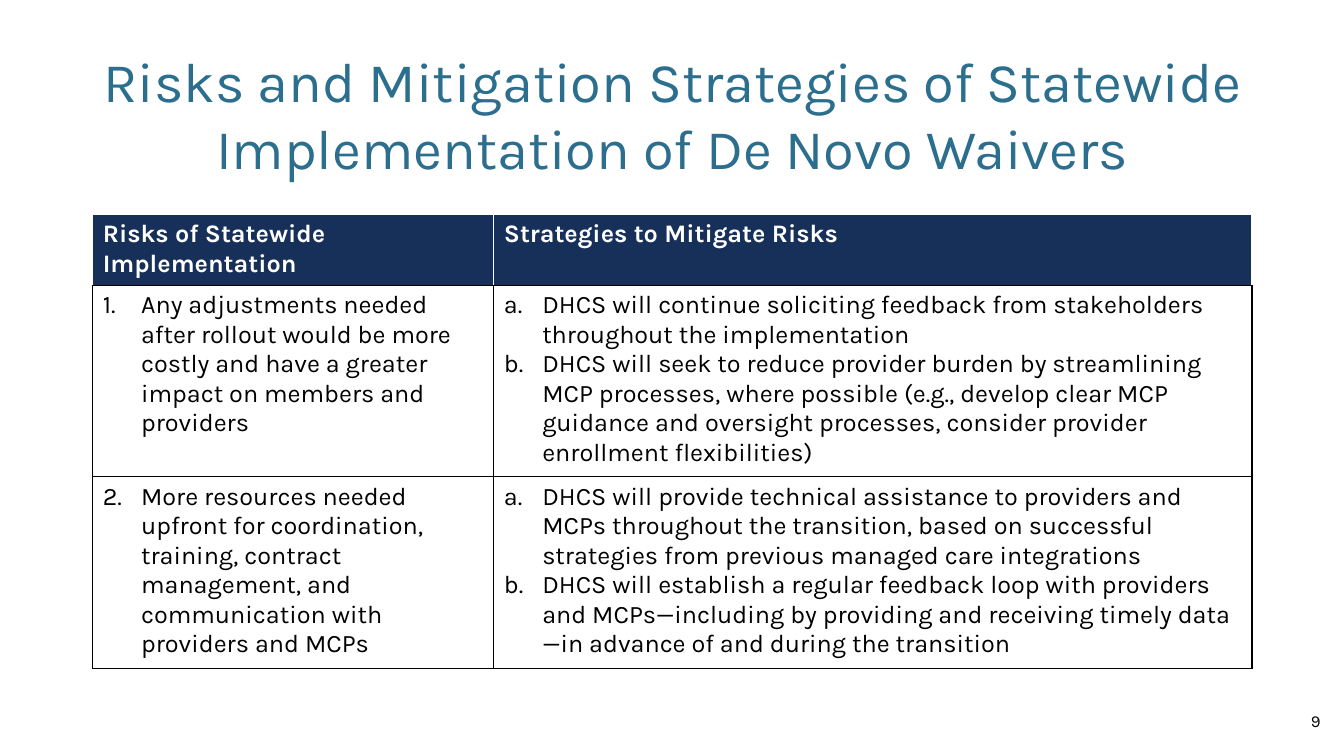
from pptx import Presentation
from pptx.dml.color import RGBColor
from pptx.enum.text import MSO_ANCHOR, PP_ALIGN
from pptx.oxml import parse_xml
from pptx.oxml.ns import nsdecls
from pptx.util import Inches, Pt
from lxml.etree import SubElement

NAVY, TEAL, WHITE, BLACK = "173059", "2C6E8D", "FFFFFF", "000000"

deck = Presentation()
deck.slide_width, deck.slide_height = Inches(13.33), Inches(7.5)
col, row = deck.slide_width / 100, deck.slide_height / 100
slide = deck.slides.add_slide(deck.slide_layouts[6])


def hue(code):
    return RGBColor.from_string(code)


def style(par, text, look):
    par.text = text
    font = par.runs[0].font
    for key, value in look.items():
        setattr(font, key, value)
    return font


labels = [
    ("Risks and Mitigation Strategies of Statewide Implementation of De Novo Waivers",
     (6.9, 5.33, 86.25, 19.33), 40, TEAL, PP_ALIGN.CENTER),
    ("9", (76.5, 92.67, 22.5, 5.33), 12, BLACK, PP_ALIGN.RIGHT),
]
for text, (left, top, wide, high), size, tone, side in labels:
    box = slide.shapes.add_textbox(
        int(left * col), int(top * row), int(wide * col), int(high * row))
    frame = box.text_frame
    frame.word_wrap = True
    frame.vertical_anchor = MSO_ANCHOR.MIDDLE
    par = frame.paragraphs[0]
    par.alignment = side
    style(par, text, {"name": "Karla", "size": Pt(size)}).color.rgb = hue(tone)

rows = [
    [["Risks of Statewide Implementation"], ["Strategies to Mitigate Risks"]],
    [["Any adjustments needed after rollout would be more costly and have a greater impact on members and providers"],
     ["DHCS will continue soliciting feedback from stakeholders throughout the implementation",
      "DHCS will seek to reduce provider burden by streamlining MCP processes, where possible (e.g., develop clear MCP guidance and oversight processes, consider provider enrollment flexibilities)"]],
    [["More resources needed upfront for coordination, training, contract management, and communication with providers and MCPs"],
     ["DHCS will provide technical assistance to providers and MCPs throughout the transition, based on successful strategies from previous managed care integrations",
      "DHCS will establish a regular feedback loop with providers and MCPs—including by providing and receiving timely data—in advance of and during the transition"]],
]
spans, highs = (29.85, 56.4), (9.07, 24.8, 24.8)
table = slide.shapes.add_table(
    3, 2, int(6.9 * col), int(28.4 * row),
    int(sum(spans) * col), int(sum(highs) * row)).table
for part, span in zip(table.columns, spans):
    part.width = int(span * col)
for part, high in zip(table.rows, highs):
    part.height = int(high * row)

for r, cells in enumerate(rows):
    head = r == 0
    look = {"name": "Karla", "size": Pt(18), "bold": head}
    for c, lines in enumerate(cells):
        cell = table.cell(r, c)
        cell.fill.solid()
        cell.fill.fore_color.rgb = hue(NAVY if head else WHITE)
        props = cell._tc.get_or_add_tcPr()
        for spot, edge in enumerate(("lnL", "lnR", "lnT", "lnB")):
            tone = WHITE if head and edge != "lnB" else BLACK
            props.insert(spot, parse_xml(
                f'<a:{edge} {nsdecls("a")} w="12700"><a:solidFill>'
                f'<a:srgbClr val="{tone}"/></a:solidFill></a:{edge}>'))
        frame = cell.text_frame
        for i, text in enumerate(lines):
            par = frame.add_paragraph() if i else frame.paragraphs[0]
            if not head:
                form = par._p.get_or_add_pPr()
                form.set("marL", str(Inches(0.38)))
                form.set("indent", str(-Inches(0.38)))
                space = form.nsmap["a"]
                mark = SubElement(form, f"{{{space}}}buAutoNum")
                mark.set("type", "alphaLcPeriod" if c else "arabicPeriod")
                if c == 0:
                    mark.set("startAt", str(r))
            style(par, text, look).color.rgb = hue(WHITE if head else BLACK)

deck.save("out.pptx")
